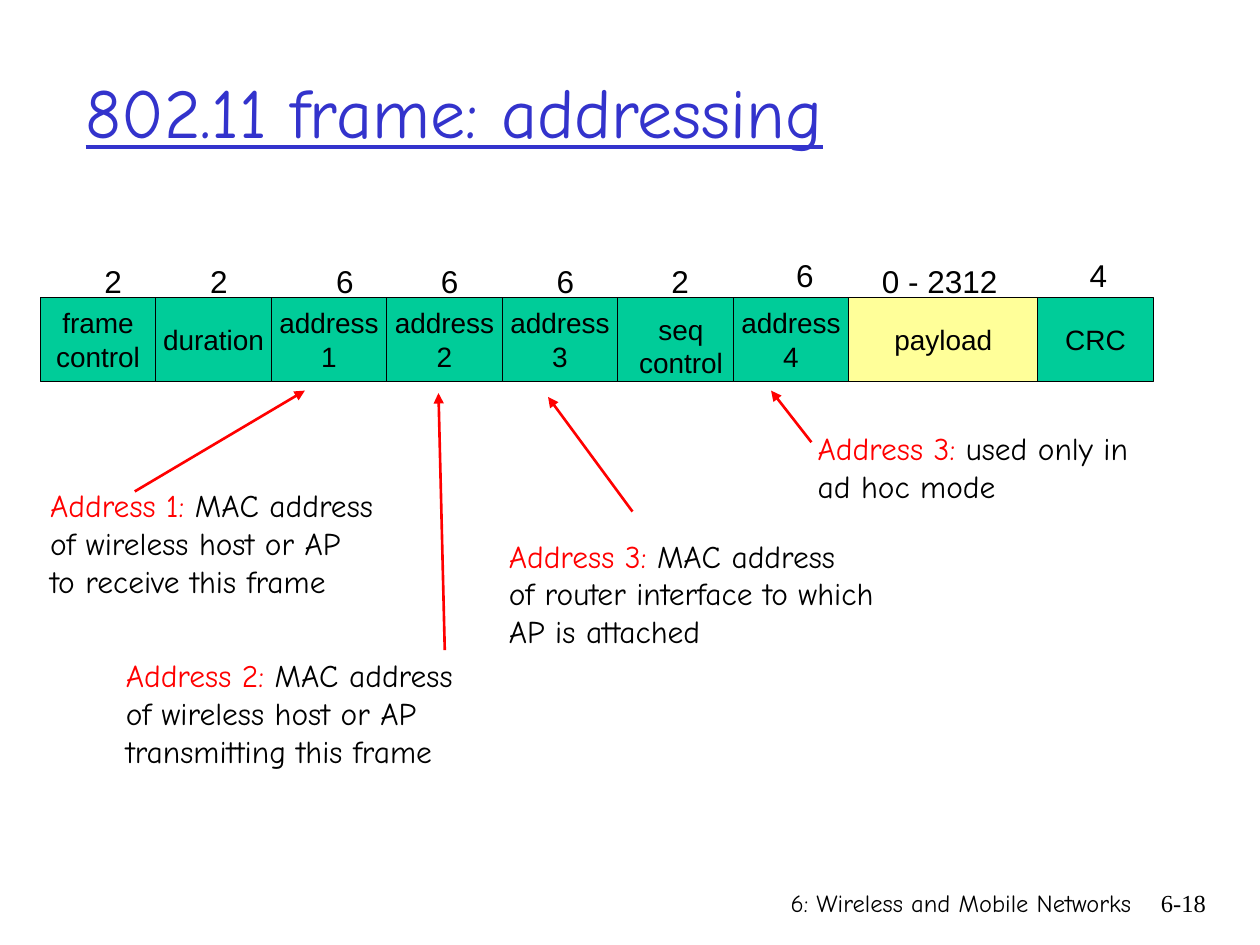
import lxml.etree
import pptx
import pptx.util
import pptx.dml.color
import pptx.enum.text
import pptx.enum.shapes
import pptx.oxml.ns

Inches = pptx.util.Inches
Pt = pptx.util.Pt
RGB = pptx.dml.color.RGBColor
Align = pptx.enum.text.PP_ALIGN
Anchor = pptx.enum.text.MSO_ANCHOR
Fit = pptx.enum.text.MSO_AUTO_SIZE
Shape = pptx.enum.shapes.MSO_SHAPE
Link = pptx.enum.shapes.MSO_CONNECTOR
qn = pptx.oxml.ns.qn

BLACK = RGB(0, 0, 0)
BLUE = RGB(0x33, 0x33, 0xCC)
RED = RGB(0xFF, 0, 0)
GREEN = RGB(0, 0xCC, 0x99)
YELLOW = RGB(0xFF, 0xFF, 0x99)

HEAD = {"name": "Comic Neue", "size": Pt(40), "underline": True}
NOTE = {"name": "Comic Neue", "size": Pt(18)}
FOOT = {"name": "Comic Neue", "size": Pt(14)}
PAGE = {"name": "Times New Roman", "size": Pt(14)}
CELL = {"name": "Arial", "size": Pt(16)}
BYTE = {"name": "Arial", "size": Pt(18)}


class Deck:
    def __init__(self, wide, high):
        self.file = pptx.Presentation()
        self.file.slide_width = Inches(wide)
        self.file.slide_height = Inches(high)
        self.slide = self.file.slides.add_slide(self.file.slide_layouts[5])
        self.shapes = self.slide.shapes

    def put(self, frame, lines, style, align=Align.LEFT):
        for i, line in enumerate(lines):
            para = frame.add_paragraph() if i else frame.paragraphs[0]
            para.alignment = align
            for text, color in line:
                run = para.add_run()
                run.text = text
                for key, value in style.items():
                    setattr(run.font, key, value)
                run.font.color.rgb = color

    def title(self, text, *box):
        head = self.slide.shapes.title
        head.left, head.top, head.width, head.height = map(Inches, box)
        head.text_frame.vertical_anchor = Anchor.MIDDLE
        self.put(head.text_frame, [[(text, BLUE)]], HEAD)

    def text(self, box, lines, style, align=Align.LEFT, wrap=False, fit=Fit.SHAPE_TO_FIT_TEXT):
        frame = self.shapes.add_textbox(*map(Inches, box)).text_frame
        frame.word_wrap = wrap
        frame.auto_size = fit
        self.put(frame, lines, style, align)

    def cell(self, box, lines, fill):
        rect = self.shapes.add_shape(Shape.RECTANGLE, *map(Inches, box))
        rect.shadow.inherit = False
        rect.fill.solid()
        rect.fill.fore_color.rgb = fill
        rect.line.color.rgb = BLACK
        rect.line.width = Pt(0.75)
        rect.text_frame.word_wrap = False
        rect.text_frame.vertical_anchor = Anchor.MIDDLE
        self.put(rect.text_frame, lines, CELL, Align.CENTER)

    def arrow(self, *ends):
        link = self.shapes.add_connector(Link.STRAIGHT, *map(Inches, ends))
        link.line.color.rgb = RED
        link.line.width = Pt(1.5)
        props = link._element.spPr
        lxml.etree.SubElement(props.find(qn("a:ln")), qn("a:tailEnd"), type="triangle")
        lxml.etree.SubElement(props, qn("a:effectLst"))

    def group(self):
        self.shapes = self.slide.shapes.add_group_shape().shapes

    def leave(self):
        self.shapes = self.slide.shapes


def plain(*lines):
    return [[(line, BLACK)] for line in lines]


def main():
    deck = Deck(10, 7.5)
    deck.title("802.11 frame: addressing", 0.58, 0.25, 8.5, 1.25)

    feet = [
        ((4.86, 7, 4.22, 0.5), "6: Wireless and Mobile Networks", FOOT),
        ((8.93, 7, 0.74, 0.5), "6-18", PAGE),
    ]
    for box, text, style in feet:
        deck.text(box, plain(text), style, Align.RIGHT, True, Fit.NONE)

    deck.group()
    unit = 5.5 / 6
    fields = [
        (["frame", "control"], unit, GREEN),
        (["duration"], unit, GREEN),
        (["address", "1"], unit, GREEN),
        (["address", "2"], unit, GREEN),
        (["address", "3"], unit, GREEN),
        ([], unit, GREEN),
        (["address", "4"], unit, GREEN),
        (["payload"], 1.5, YELLOW),
        (["CRC"], unit, GREEN),
    ]
    left = 0.32
    for lines, wide, fill in fields:
        deck.cell((left, 2.36, wide, 0.67), plain(*lines), fill)
        left += wide
    deck.text((4.97, 2.43, 0.87, 0.64), plain("seq", "control"), CELL, Align.CENTER)

    sizes = [
        ("2", 0.73, 2.03), ("2", 1.57, 2.03), ("6", 2.57, 2.03),
        ("6", 3.4, 2.03), ("6", 4.32, 2.03), ("2", 5.23, 2.03),
        ("6", 6.22, 1.98), ("0 - 2312", 6.9, 2.03), ("4", 8.55, 1.98),
    ]
    for text, left, top in sizes:
        wide = 0.34 if len(text) == 1 else 1.12
        deck.text((left, top, wide, 0.4), plain(text), BYTE)
    deck.leave()

    notes = [
        ((0.3, 3.81, 3.07, 1), "Address 1:", " MAC address",
         ["of wireless host or AP", "to receive this frame"], False),
        ((0.9, 5.16, 3.11, 1), "Address 2:", " MAC address",
         ["of wireless host or AP", "transmitting this frame"], False),
        ((3.94, 4.21, 3.34, 1), "Address 3:", " MAC address",
         ["of router interface to which AP is attached"], True),
        ((6.39, 3.36, 2.85, 0.7), "Address 3:", " used only in ad hoc mode", [], True),
    ]
    for box, label, text, rest, wrap in notes:
        lines = [[(label, RED), (text, BLACK)]] + plain(*rest)
        deck.text(box, lines, NOTE, wrap=wrap)

    arrows = [
        (1.07, 3.9, 2.42, 3.1),
        (3.53, 5.16, 3.48, 3.12),
        (5.02, 4.06, 4.35, 3.15),
        (6.44, 3.51, 6.12, 3.1),
    ]
    for ends in arrows:
        deck.arrow(*ends)

    deck.file.save("out.pptx")


if __name__ == "__main__":
    main()
